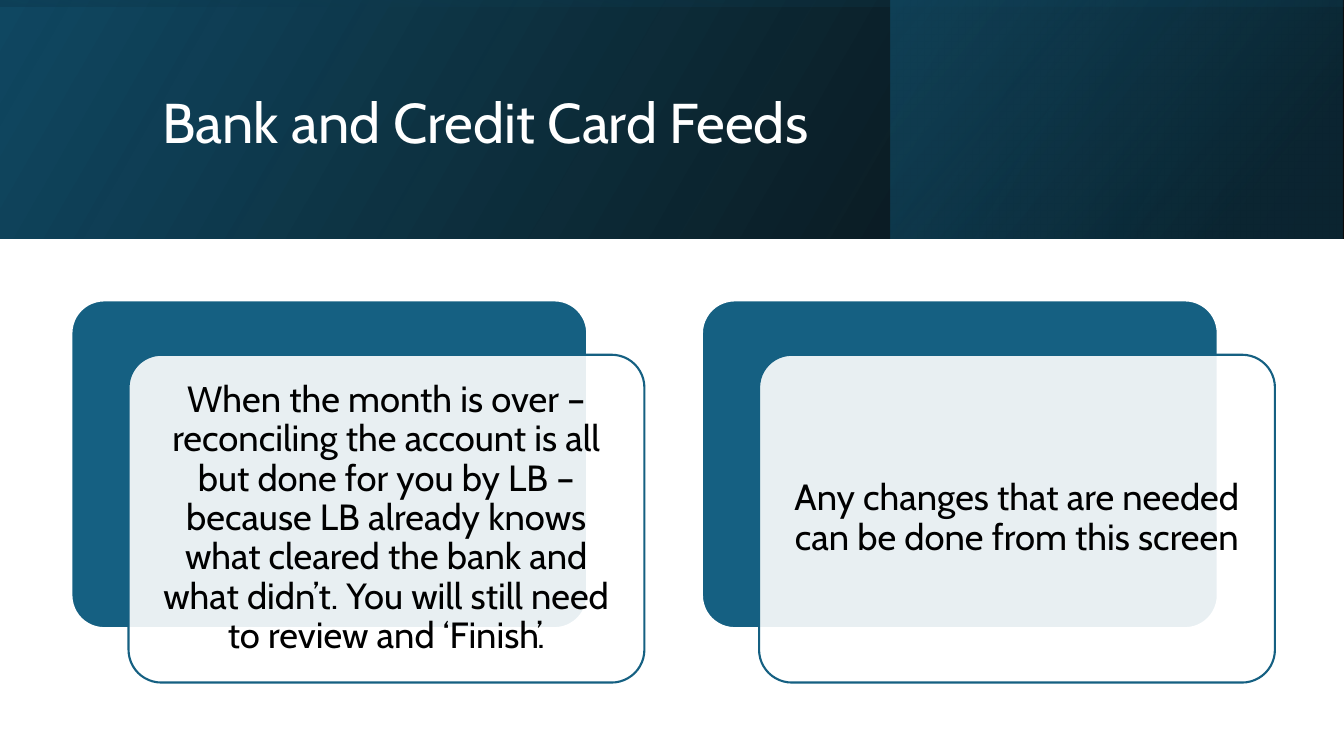
from pptx import Presentation
from pptx import util as u
from pptx.dml.color import RGBColor
from pptx.enum import shapes, text
from pptx.oxml.ns import qn
from lxml import etree

WHITE = RGBColor(0xFF, 0xFF, 0xFF)
BLACK = RGBColor(0x00, 0x00, 0x00)
TEAL = RGBColor(0x15, 0x60, 0x82)
DEEP_TEAL = RGBColor(0x10, 0x48, 0x62)
NIGHT = RGBColor(0x0B, 0x30, 0x41)
FONT = "Cabin"
SLIDE_WIDTH, SLIDE_HEIGHT = 33.87, 19.05
BANNER_HEIGHT = 6.02
CARD_WIDTH, CARD_HEIGHT = 13, 8.26
CARD_LEFT, CARD_TOP, CARD_STEP = 1.8, 7.57, 15.89
FRONT_RIGHT, FRONT_DOWN = 1.44, 1.37
TEXT_MARGIN = 0.25
CARD_TEXTS = [
    "When the month is over – reconciling the account is all but done for you "
    "by LB – because LB already knows what cleared the bank and what didn’t. "
    "You will still need to review and ‘Finish’.",
    "Any changes that are needed can be done from this screen",
]


def lengths(*values):
    return [u.Cm(value) for value in values]


def set_opacity(color, percent):
    etree.SubElement(color, qn("a:alpha")).set("val", str(percent * 1000))


def write(frame, words, size, color, align, inset=None):
    frame.word_wrap = True
    frame.auto_size = text.MSO_AUTO_SIZE.NONE
    frame.vertical_anchor = text.MSO_ANCHOR.MIDDLE
    if inset is not None:
        frame.margin_left = frame.margin_right = u.Cm(inset)
        frame.margin_top = frame.margin_bottom = u.Cm(inset)
    para = frame.paragraphs[0]
    para.alignment = align
    para.line_spacing = 0.9
    span = para.add_run()
    span.text = words
    span.font.size = u.Pt(size)
    span.font.name = FONT
    span.font.color.rgb = color


def add_banner(page, place, stops, angle, rotation=0):
    banner = page.shapes.add_shape(shapes.MSO_SHAPE.RECTANGLE, *lengths(*place))
    banner.shadow.inherit = False
    banner.line.fill.background()
    banner.rotation = rotation
    banner.element.spPr.get_or_add_xfrm().set("flipH", "1")
    banner.fill.gradient()
    banner.fill.gradient_angle = angle
    for stop, (position, color, _) in zip(banner.fill.gradient_stops, stops):
        stop.position = position
        stop.color.rgb = color
    colors = banner.element.spPr.findall(".//" + qn("a:srgbClr"))
    for color, (_, _, opacity) in zip(colors, stops):
        set_opacity(color, opacity)


def add_panel(group, left, top, fill, line, opacity=100):
    panel = group.shapes.add_shape(
        shapes.MSO_SHAPE.ROUNDED_RECTANGLE, *lengths(left, top, CARD_WIDTH, CARD_HEIGHT))
    panel.adjustments[0] = 0.1
    panel.shadow.inherit = False
    panel.fill.solid()
    panel.fill.fore_color.rgb = fill
    panel.line.color.rgb = line
    panel.line.width = u.Pt(1.5)
    if opacity < 100:
        solid = panel.element.spPr.find(qn("a:solidFill"))
        set_opacity(solid.find(qn("a:srgbClr")), opacity)


def add_card(page, left, words):
    group = page.shapes.add_group_shape()
    front_left, front_top = left + FRONT_RIGHT, CARD_TOP + FRONT_DOWN
    add_panel(group, left, CARD_TOP, TEAL, WHITE)
    add_panel(group, front_left, front_top, WHITE, TEAL, opacity=90)
    box = group.shapes.add_textbox(*lengths(
        front_left + TEXT_MARGIN, front_top + TEXT_MARGIN,
        CARD_WIDTH - 2 * TEXT_MARGIN, CARD_HEIGHT - 2 * TEXT_MARGIN))
    write(box.text_frame, words, 26, BLACK, text.PP_ALIGN.CENTER, inset=0.28)


def add_title(page, words):
    title = page.shapes.title
    title.left, title.top, title.width, title.height = lengths(3.84, 0.97, 27, 4.37)
    write(title.text_frame, words, 40, WHITE, text.PP_ALIGN.LEFT)
    page.shapes.element.append(title.element)


def main():
    deck = Presentation()
    deck.slide_width, deck.slide_height = lengths(SLIDE_WIDTH, SLIDE_HEIGHT)
    page = deck.slides.add_slide(deck.slide_layouts.get_by_name("Title Only"))

    add_banner(page, (0, 0, SLIDE_WIDTH, BANNER_HEIGHT),
               [(0, BLACK, 96), (1, DEEP_TEAL, 100)], angle=30)
    add_banner(page, (22.45, 0, 11.38, BANNER_HEIGHT),
               [(0.19, NIGHT, 68), (1, TEAL, 48)], angle=40)
    turn = (SLIDE_WIDTH - BANNER_HEIGHT) / 2
    add_banner(page, (turn, -turn, BANNER_HEIGHT, SLIDE_WIDTH),
               [(0.23, DEEP_TEAL, 16), (0.99, BLACK, 45)], angle=10, rotation=270)
    add_title(page, "Bank and Credit Card Feeds")
    for index, words in enumerate(CARD_TEXTS):
        add_card(page, CARD_LEFT + index * CARD_STEP, words)

    deck.save("out.pptx")


if __name__ == "__main__":
    main()
